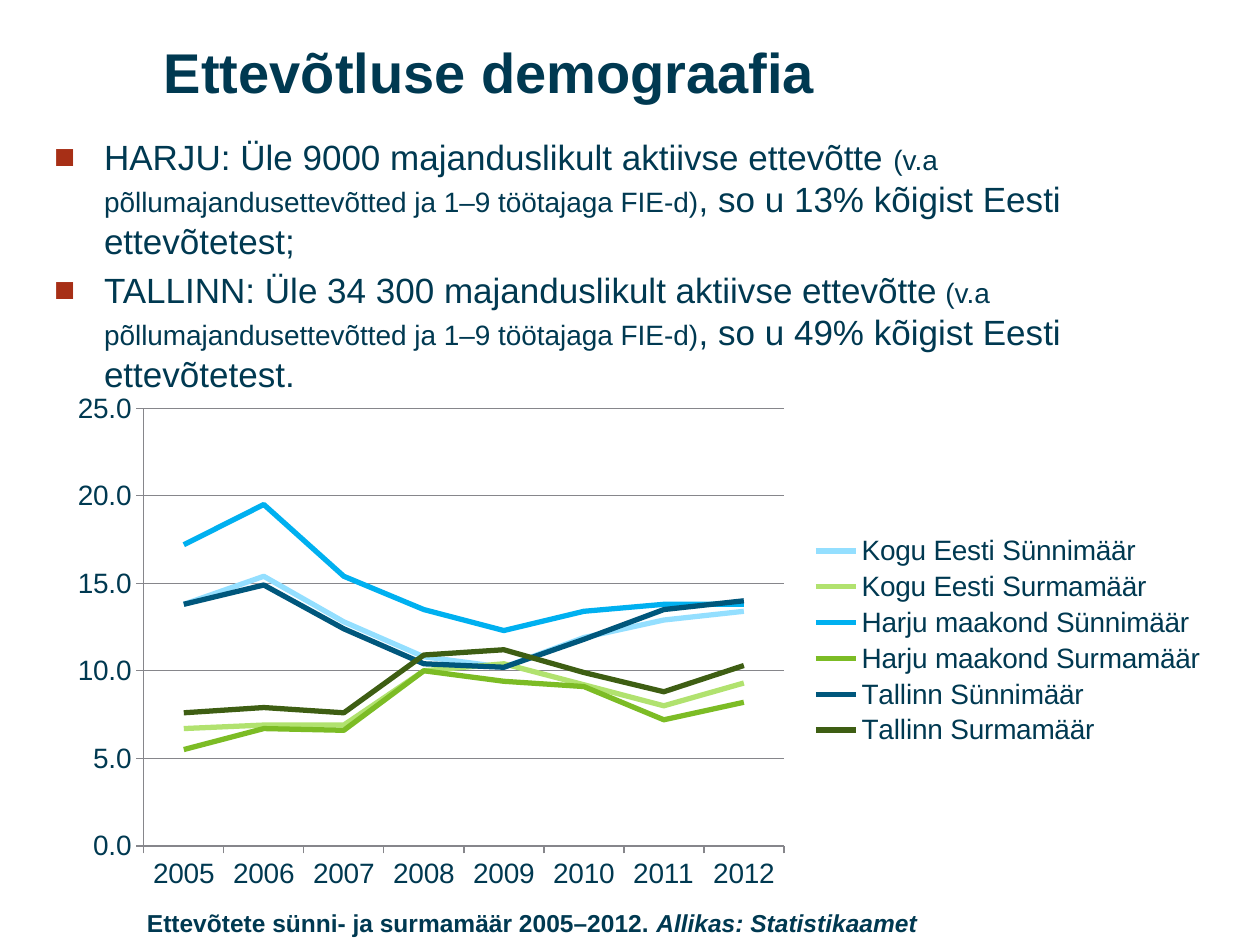
import pptx
import pptx.util
import pptx.chart.data
import pptx.dml.color
import pptx.enum.chart
import pptx.enum.text
import pptx.oxml
import pptx.oxml.ns

PX = 914400 / 126
FONT = "Arial"
RGB = pptx.dml.color.RGBColor
NAVY = RGB(0x00, 0x39, 0x51)
RUST = RGB(0xA7, 0x2F, 0x16)
GRAY = RGB(0x86, 0x86, 0x8B)
WHITE = RGB(0xFF, 0xFF, 0xFF)
PALE_BLUE = RGB(0x94, 0xDF, 0xFF)
PALE_GREEN = RGB(0xB1, 0xE2, 0x6F)
BLUE = RGB(0x00, 0xB0, 0xF0)
GREEN = RGB(0x7C, 0xBC, 0x25)
DARK_BLUE = RGB(0x00, 0x57, 0x7C)
DARK_GREEN = RGB(0x3E, 0x5E, 0x13)


def px(*lengths):
    return [round(length * PX) for length in lengths]


def add_run(paragraph, text, size=20, bold=False, italic=False):
    run = paragraph.add_run()
    run.text = text
    font = run.font
    font.name, font.size = FONT, pptx.util.Pt(size)
    font.bold, font.italic = bold, italic
    font.color.rgb = NAVY


def element(xml):
    return pptx.oxml.parse_xml(xml)


class SlideBuilder:
    def __init__(self, slide):
        self.slide = slide
        slide.background.fill.solid()
        slide.background.fill.fore_color.rgb = WHITE

    def text_box(self, box, margins=(0, 0), middle=False):
        frame = self.slide.shapes.add_textbox(*px(*box)).text_frame
        frame.word_wrap = True
        side, top = px(*margins)
        frame.margin_left = frame.margin_right = side
        frame.margin_top = frame.margin_bottom = top
        if middle:
            frame.vertical_anchor = pptx.enum.text.MSO_ANCHOR.MIDDLE
        return frame

    def bullets(self, box, items):
        frame = self.text_box(box)
        namespace = pptx.oxml.ns.nsdecls("a")
        indent, = px(50)
        for number, parts in enumerate(items):
            paragraph = frame.add_paragraph() if number else frame.paragraphs[0]
            properties = paragraph._p.get_or_add_pPr()
            properties.set("marL", str(indent))
            properties.set("indent", str(-indent))
            properties.append(element(
                f'<a:buClr {namespace}><a:srgbClr val="{RUST}"/></a:buClr>'))
            properties.append(element(f'<a:buFont {namespace} typeface="{FONT}"/>'))
            properties.append(element(f'<a:buChar {namespace} char="■"/>'))
            if number:
                paragraph.space_before = pptx.util.Pt(4)
            for text, size in parts:
                add_run(paragraph, text, size=size)

    def line_chart(self, box, plot, categories, series):
        data = pptx.chart.data.CategoryChartData(number_format="0.0")
        data.categories = categories
        for name, _, values in series:
            data.add_series(name, values)
        chart = self.slide.shapes.add_chart(
            pptx.enum.chart.XL_CHART_TYPE.LINE, *px(*box), data).chart
        chart.has_title = False
        chart.font.name, chart.font.size = FONT, pptx.util.Pt(16)
        chart.font.color.rgb = NAVY

        # Legend
        chart.has_legend = True
        chart.legend.position = pptx.enum.chart.XL_LEGEND_POSITION.RIGHT
        chart.legend.include_in_layout = False
        chart.legend.font.size = pptx.util.Pt(16)

        # Axes
        value_axis = chart.value_axis
        value_axis.minimum_scale, value_axis.maximum_scale = 0, 25
        value_axis.major_unit = 5
        value_axis.has_major_gridlines = True
        value_axis.tick_labels.number_format = "0.0"
        value_axis.tick_labels.number_format_is_linked = False
        for axis in (chart.category_axis, value_axis):
            axis.major_tick_mark = pptx.enum.chart.XL_TICK_MARK.OUTSIDE
            axis.tick_labels.font.size = pptx.util.Pt(16)
        for part in (chart.category_axis, value_axis, value_axis.major_gridlines):
            part.format.line.color.rgb = GRAY
            part.format.line.width = pptx.util.Pt(0.75)

        # Lines
        chart.plots[0].vary_by_categories = False
        for line, (_, color, _) in zip(chart.plots[0].series, series):
            line.smooth = False
            line.marker.style = pptx.enum.chart.XL_MARKER_STYLE.NONE
            line.format.line.color.rgb = color
            line.format.line.width = pptx.util.Pt(3)

        # Inner plot area as fractions of the chart
        left, top, width, height = box
        fractions = {"x": (plot[0] - left) / width, "y": (plot[1] - top) / height,
                     "w": plot[2] / width, "h": plot[3] / height}
        modes = '<c:xMode val="edge"/><c:yMode val="edge"/>'
        sizes = "".join(f'<c:{key} val="{value:.3f}"/>'
                        for key, value in fractions.items())
        plot_area = chart._chartSpace.chart.plotArea
        for layout in plot_area.findall(pptx.oxml.ns.qn("c:layout")):
            plot_area.remove(layout)
        plot_area.insert(0, element(
            f'<c:layout {pptx.oxml.ns.nsdecls("c")}><c:manualLayout>'
            f'<c:layoutTarget val="inner"/>{modes}{sizes}'
            '</c:manualLayout></c:layout>'))


def main():
    presentation = pptx.Presentation()
    presentation.slide_width, presentation.slide_height = px(1260, 945)
    builder = SlideBuilder(
        presentation.slides.add_slide(presentation.slide_layouts[6]))

    # Title
    title = builder.text_box((164, 27, 1032, 89), middle=True)
    add_run(title.paragraphs[0], "Ettevõtluse demograafia", size=32, bold=True)

    # Company counts
    scope = "(v.a põllumajandusettevõtted ja 1–9 töötajaga FIE-d)"
    builder.bullets((54, 135, 1153, 307), [
        [("HARJU: Üle 9000 majanduslikult aktiivse ettevõtte ", 20),
         (scope, 16), (", so u 13% kõigist Eesti ettevõtetest;", 20)],
        [("TALLINN: Üle 34 300 majanduslikult aktiivse ettevõtte", 20),
         (" " + scope, 16), (", so u 49% kõigist Eesti ettevõtetest.", 20)],
    ])

    # Caption
    caption = builder.text_box((134, 902, 922, 43), margins=(13, 6)).paragraphs[0]
    add_run(caption, "Ettevõtete sünni- ja surmamäär 2005–2012. ", size=14, bold=True)
    add_run(caption, "Allikas: Statistikaamet", size=14, bold=True, italic=True)

    # Birth and death rates
    rates = [
        ("Kogu Eesti Sünnimäär", PALE_BLUE,
         (13.8, 15.4, 12.8, 10.8, 10.2, 11.9, 12.9, 13.4)),
        ("Kogu Eesti Surmamäär", PALE_GREEN,
         (6.7, 6.9, 6.9, 10, 10.4, 9.2, 8, 9.3)),
        ("Harju maakond Sünnimäär", BLUE,
         (17.2, 19.5, 15.4, 13.5, 12.3, 13.4, 13.8, 13.8)),
        ("Harju maakond Surmamäär", GREEN,
         (5.5, 6.7, 6.6, 10, 9.4, 9.1, 7.2, 8.2)),
        ("Tallinn Sünnimäär", DARK_BLUE,
         (13.8, 14.9, 12.4, 10.4, 10.2, 11.8, 13.5, 14)),
        ("Tallinn Surmamäär", DARK_GREEN,
         (7.6, 7.9, 7.6, 10.9, 11.2, 9.9, 8.8, 10.3)),
    ]
    years = [str(year) for year in range(2005, 2013)]
    builder.line_chart((54, 383, 1166, 515), (144, 408, 640, 438), years, rates)

    presentation.save("out.pptx")


if __name__ == "__main__":
    main()
